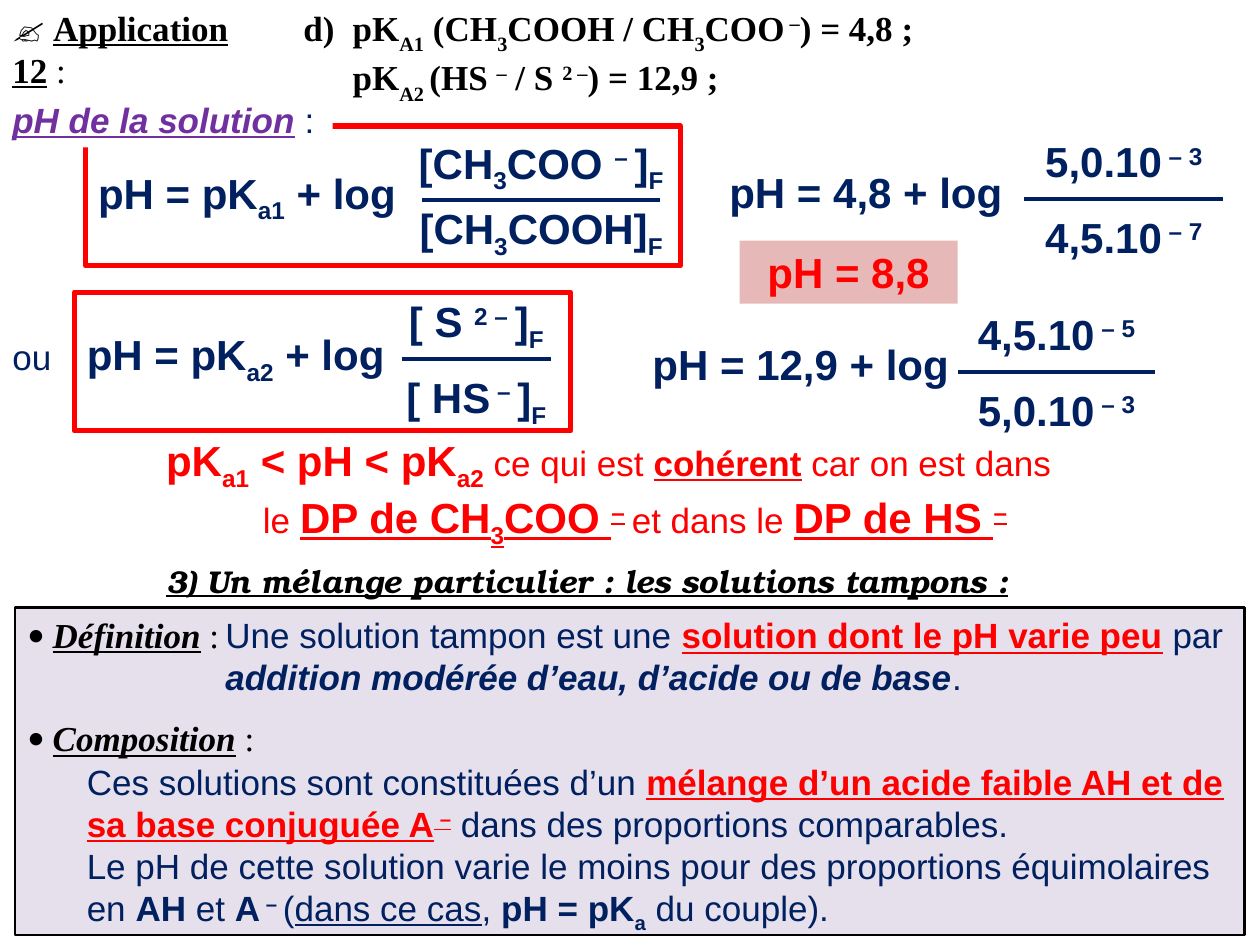
from lxml.etree import SubElement
from pptx import Presentation
from pptx.dml.color import RGBColor
from pptx.enum.shapes import MSO_CONNECTOR, MSO_SHAPE
from pptx.enum.text import MSO_ANCHOR, PP_ALIGN
from pptx.oxml.ns import qn
from pptx.util import Inches, Pt

NAVY = RGBColor(0x00, 0x20, 0x60)
RED = RGBColor(0xFF, 0x00, 0x00)
PURPLE = RGBColor(0x70, 0x30, 0xA0)
BLACK = RGBColor(0x00, 0x00, 0x00)
WHITE = RGBColor(0xFF, 0xFF, 0xFF)
PINK = RGBColor(0xE6, 0xB9, 0xB8)
LILAC = RGBColor(0xE6, 0xE0, 0xEC)

WIDTH, HEIGHT = Inches(10), Inches(7.5)
COLUMN, ROW = WIDTH / 100, HEIGHT / 75

BODY = dict(size=20, font="Arial", color=NAVY)
FORMULA = dict(size=24, font="Arial", color=NAVY, bold=True)
TITLE = dict(size=20, font="Times New Roman", color=BLACK, bold=True)
VERDICT = dict(size=20, font="Arial", color=RED)
TERM = dict(size=20, font="Times New Roman", color=BLACK)
SECTION = dict(size=18, font="TeX Gyre Bonum", color=BLACK,
               bold=True, italic=True, underline=True)
BOLD = dict(bold=True)
UNDERLINED = dict(underline=True)
STRONG = dict(bold=True, underline=True)
BIG = dict(size=24, bold=True)
BIG_LINE = dict(BIG, underline=True)
KEY = dict(STRONG, color=RED)
NAMED = dict(STRONG, italic=True)


def sub(text, baseline=-25, **style):
    return text, dict(style, baseline=baseline)


def sup(text, **style):
    return sub(text, 30, **style)


def grid(left, top, width, height):
    """Turn columns and rows into slide lengths."""
    return [round(n) for n in (left * COLUMN, top * ROW, width * COLUMN, height * ROW)]


def add_span(para, text, size, font, color, bold=False, italic=False,
             underline=False, baseline=0):
    span = para.add_run()
    span.text = text
    span.font.size = Pt(size)
    span.font.name = font
    span.font.color.rgb = color
    span.font.bold, span.font.italic, span.font.underline = bold, italic, underline
    if baseline:
        span.font._element.set("baseline", str(baseline * 1000))


def write(box, *paragraphs, style, aligns=(PP_ALIGN.LEFT,), anchor=MSO_ANCHOR.TOP, wrap=True):
    """Fill a box; a part is plain text or a pair of text and changes to the style."""
    frame = box.text_frame
    frame.word_wrap = wrap
    frame.vertical_anchor = anchor
    for index, parts in enumerate(paragraphs):
        para = frame.add_paragraph() if index else frame.paragraphs[0]
        para.alignment = aligns[min(index, len(aligns) - 1)]
        for part in parts:
            text, changes = (part, {}) if isinstance(part, str) else part
            add_span(para, text, **{**style, **changes})
    return box


def add_text(page, area, *paragraphs, **layout):
    return write(page.shapes.add_textbox(*grid(*area)), *paragraphs, **layout)


def add_panel(page, area, fill=None, line=None, weight=3):
    panel = page.shapes.add_shape(MSO_SHAPE.RECTANGLE, *grid(*area))
    panel.shadow.inherit = False
    if fill is None:
        panel.fill.background()
    else:
        panel.fill.solid()
        panel.fill.fore_color.rgb = fill
    if line is None:
        panel.line.fill.background()
    else:
        panel.line.color.rgb = line
        panel.line.width = Pt(weight)
    return panel


def add_fraction(page, left, top, length, text_width, numerator, denominator, gap=0.5):
    """Draw a fraction bar with a term centred above and below it."""
    x, y, span, _ = grid(left, top, length, 0)
    bar = page.shapes.add_connector(MSO_CONNECTOR.STRAIGHT, x, y, x + span, y)
    bar.line.color.rgb = NAVY
    bar.line.width = Pt(2.25)
    SubElement(bar._element.spPr, qn("a:effectLst"))
    text_left = left + (length - text_width) / 2
    for text_top, term in ((top - 5.5, numerator), (top + gap, denominator)):
        add_text(page, (text_left, text_top, text_width, 5), term,
                 style=FORMULA, aligns=[PP_ALIGN.CENTER], wrap=False)


def add_bullet(para, margin):
    """Hang the paragraph behind a round bullet; the margin is in columns."""
    props = para._p.get_or_add_pPr()
    props.set("marL", str(round(margin * COLUMN)))
    props.set("indent", str(round(-margin * COLUMN)))
    SubElement(props, qn("a:buFont"), typeface="Calibri")
    SubElement(props, qn("a:buChar"), char="•")


def add_heading(page):
    add_text(page, (0, 0, 24, 4.4),
             ["✍ ", ("Application 12", UNDERLINED), (" :", dict(bold=False))],
             style=TITLE, wrap=False)
    add_text(page, (23.1, 0, 5, 4.4), ["d)"], style=TITLE, wrap=False)
    add_text(
        page, (27, 0, 70, 8.6),
        ["pK", sub("A1", -30), " (CH", sub("3", -30), "COOH / CH", sub("3", -30), "COO",
         sup(" –"), ") = 4,8 ;"],
        ["pK", sub("A2 ", -30), "(HS ", sup("–"), " / S ", sup("2 –"), ") = 12,9 ;"],
        style=TITLE)


def add_calculations(page):
    justified = [PP_ALIGN.JUSTIFY]
    for left, top, width, parts in (
            (6.8, 12.8, 26.8, ["pH = pK", sub("a1"), " + log"]),
            (56.9, 12.7, 23.8, ["pH = 4,8 + log"]),
            (5.9, 25.6, 26.8, ["pH = pK", sub("a2"), " + log"]),
            (50.8, 26.4, 26.8, ["pH = 12,9 + log"])):
        add_text(page, (left, top, width, 5), parts, style=FORMULA, aligns=justified)

    add_fraction(page, 33.5, 15.9, 18.9, 22,
                 ["[CH", sub("3"), "COO ", sup("– "), "]", sub("F")],
                 ["[CH", sub("3"), "COOH]", sub("F")], gap=-0.3)
    add_fraction(page, 81.3, 15.8, 15.8, 15.1,
                 ["5,0.10", sup(" – 3")], ["4,5.10", sup(" – 7")])
    add_fraction(page, 31.9, 28.5, 11.8, 13.8,
                 ["[ S ", sup("2 – "), "]", sub("F")],
                 ["[ HS", sup(" – "), "]", sub("F")])
    add_fraction(page, 76, 29.5, 15.7, 15.1,
                 ["4,5.10", sup(" – 5")], ["5,0.10", sup(" – 3")])

    add_panel(page, (6.8, 10, 47.2, 11.1), line=RED)
    add_panel(page, (5.9, 23.2, 39.4, 11), line=RED)
    write(add_panel(page, (0, 7.3, 26.4, 4.4), fill=WHITE),
          [("pH de la solution", dict(NAMED, color=PURPLE)), " :"],
          style=BODY, aligns=justified)
    write(add_panel(page, (58.7, 19.1, 17.3, 5), fill=PINK),
          ["pH = 8,8"], style=dict(FORMULA, color=RED), aligns=[PP_ALIGN.CENTER])
    add_text(page, (0, 26.1, 7, 4.4), ["ou"], style=BODY, aligns=justified)


def add_conclusion(page):
    add_text(
        page, (12.2, 34, 76.4, 12.7),
        [("pK", BIG), sub("a1", **BIG), (" < pH < pK", BIG), sub("a2", **BIG),
         " ce qui est ", ("cohérent", STRONG), " car on est dans "],
        ["le ", ("DP de CH", BIG_LINE), sub("3", **BIG_LINE), ("COO ", BIG_LINE),
         sup("–", **BIG_LINE), sup(" ", **BIG), "et dans le ",
         ("DP de HS ", BIG_LINE), sup("–", **BIG_LINE)],
        style=VERDICT, aligns=[PP_ALIGN.JUSTIFY, PP_ALIGN.CENTER])


def add_buffer_section(page):
    add_text(page, (12.2, 44.1, 69.7, 5.7),
             ["3) Un mélange particulier : les solutions tampons :"],
             style=SECTION, wrap=False)
    panel = write(add_panel(page, (1.2, 48.2, 97.6, 26), LILAC, BLACK, 1.5),
                  [("Définition", NAMED), " :"], [("Composition", NAMED), " :"],
                  style=TERM)
    for para in panel.text_frame.paragraphs:
        add_bullet(para, 2)
    panel.text_frame.paragraphs[0].space_after = Pt(35)

    add_text(page, (16.9, 48.2, 83.1, 7.7),
             ["Une solution tampon est une ", ("solution dont le pH varie peu", KEY),
              " par ", ("addition modérée d’eau, d’acide ou de base",
                        dict(bold=True, italic=True)), "."],
             style=BODY, anchor=MSO_ANCHOR.MIDDLE)
    add_text(page, (5.9, 60, 94.1, 14.5),
             ["Ces solutions sont constituées d’un ",
              ("mélange d’un acide faible AH et de sa base conjuguée A", KEY),
              sup(" –", **KEY), " dans des proportions comparables."],
             ["Le pH de cette solution varie le moins pour des proportions équimolaires en ",
              ("AH", BOLD), " et ", ("A", BOLD), sup(" – ", **BOLD), "(",
              ("dans ce cas", UNDERLINED), ", ", ("pH = pK", BOLD), sub("a", **BOLD),
              " du couple)."],
             style=BODY, anchor=MSO_ANCHOR.MIDDLE)


def main():
    deck = Presentation()
    deck.slide_width, deck.slide_height = WIDTH, HEIGHT
    page = deck.slides.add_slide(deck.slide_layouts[6])
    add_calculations(page)
    add_heading(page)
    add_conclusion(page)
    add_buffer_section(page)
    deck.save("out.pptx")


if __name__ == "__main__":
    main()
